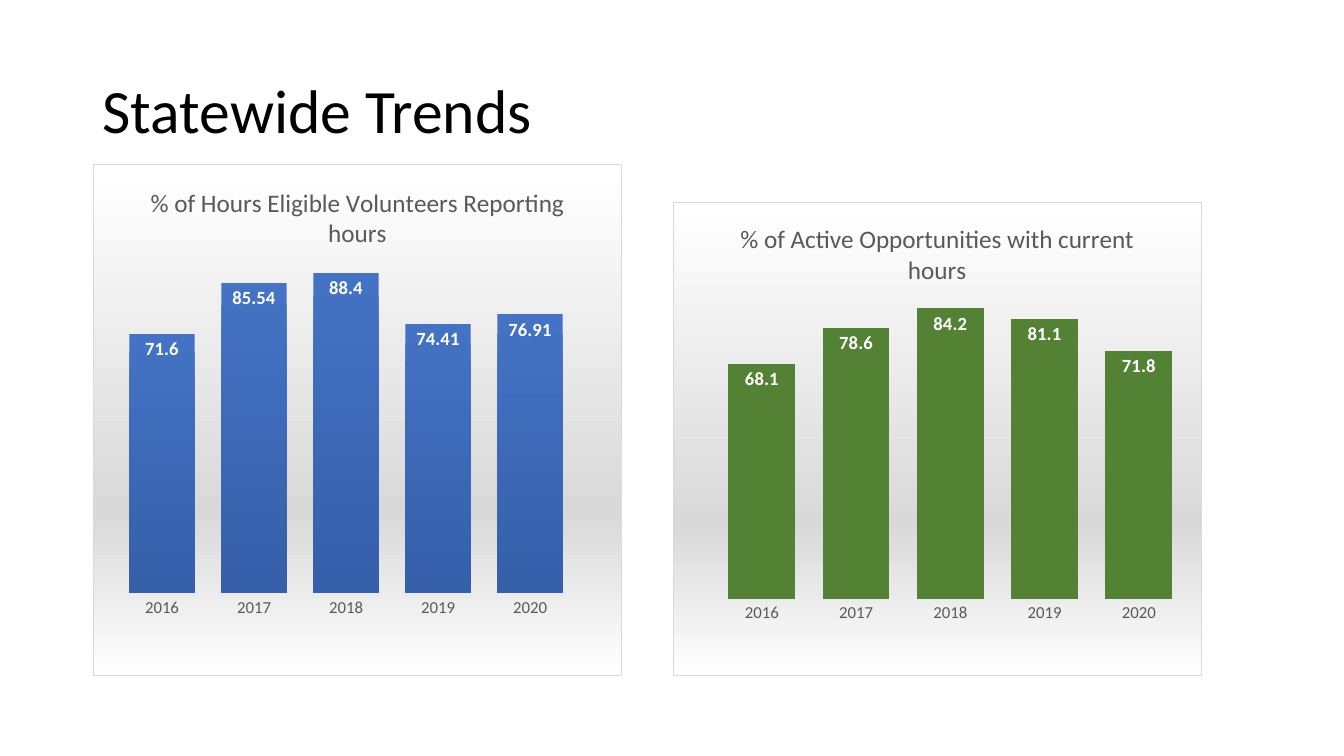
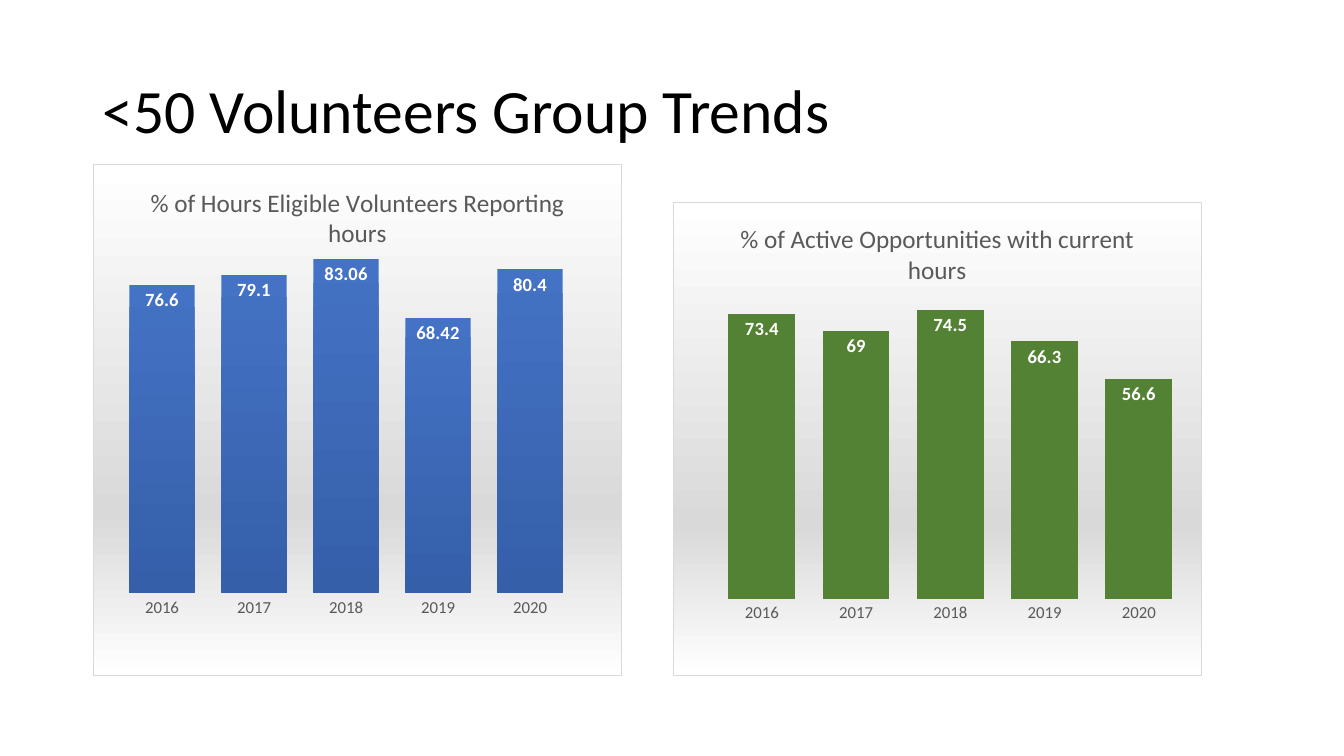
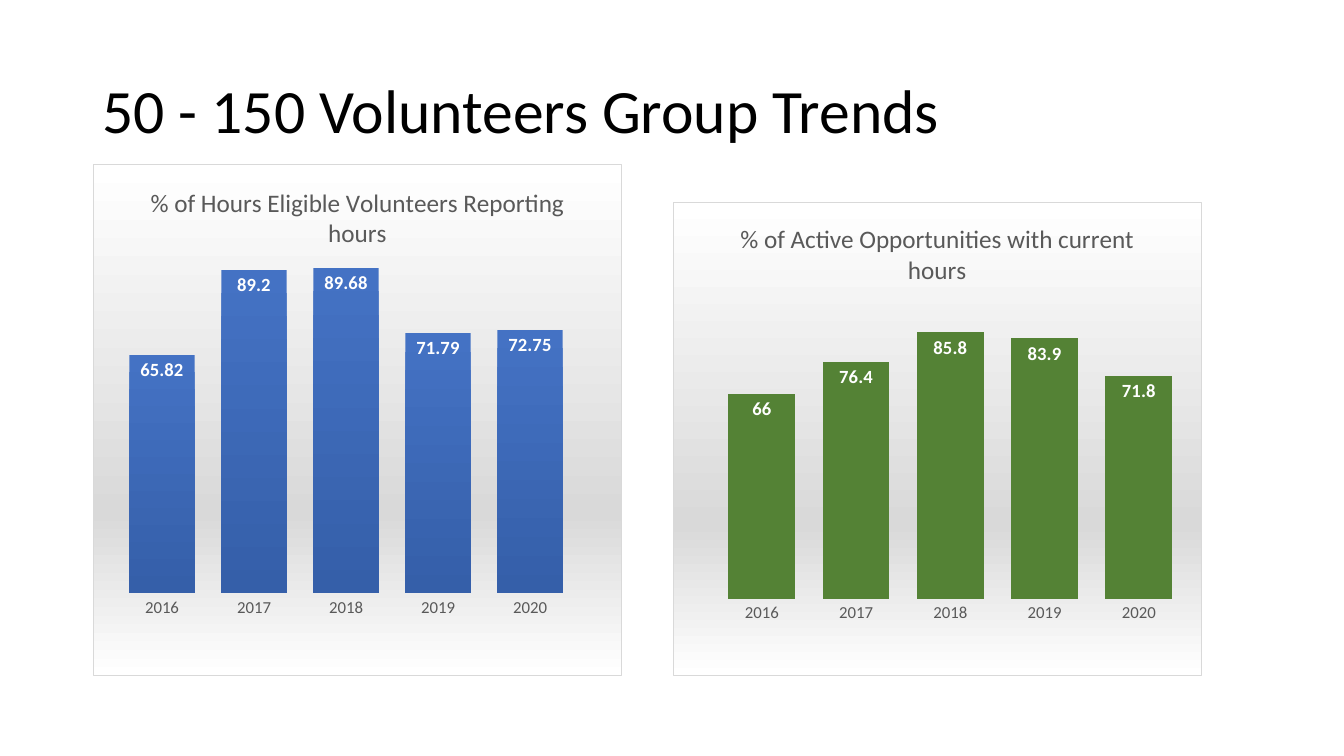
from dataclasses import dataclass

import lxml.etree
import pptx
import pptx.chart.chart
import pptx.chart.data
import pptx.dml.color
import pptx.enum.chart
import pptx.enum.text
import pptx.oxml
import pptx.oxml.ns
import pptx.presentation
import pptx.slide
import pptx.text.text
import pptx.util

RGBColor = pptx.dml.color.RGBColor
Inches = pptx.util.Inches
Pt = pptx.util.Pt

BLACK = RGBColor(0x00, 0x00, 0x00)
WHITE = RGBColor(0xFF, 0xFF, 0xFF)
GRAY_TEXT = RGBColor(0x59, 0x59, 0x59)
GRAY_LIGHT = RGBColor(0xD9, 0xD9, 0xD9)
BLUE = RGBColor(0x44, 0x72, 0xC4)
BLUE_DARK = RGBColor(0x35, 0x5F, 0xA9)
GREEN = RGBColor(0x54, 0x82, 0x35)

FONT = "Calibri"
YEARS = ("2016", "2017", "2018", "2019", "2020")

SLIDE_WIDTH, SLIDE_HEIGHT = 13.33, 7.5
MARGIN = 0.92
CONTENT_WIDTH = 11.5
TITLE_TOP, TITLE_HEIGHT = 0.4, 1.45
COLUMN_WIDTH, COLUMN_GAP = 5.25, 0.5
CHART_BOTTOM = 6.71

GradientStops = tuple[tuple[int, RGBColor], ...]
PANEL_STOPS: GradientStops = ((0, WHITE), (68, GRAY_LIGHT), (100, WHITE))


@dataclass(frozen=True)
class ChartStyle:
    title: str
    column: int
    top: float
    plot: tuple[float, float, float, float]
    bar_stops: GradientStops


@dataclass(frozen=True)
class Measure:
    values: tuple[float, ...]
    axis_maximum: int


@dataclass(frozen=True)
class TrendSlide:
    title: str
    reporting: Measure
    current: Measure


REPORTING_STYLE = ChartStyle(
    "% of Hours Eligible Volunteers Reporting hours",
    0, 1.63, (0.043, 0.129, 0.871, 0.71), ((0, BLUE), (100, BLUE_DARK)),
)
CURRENT_STYLE = ChartStyle(
    "% of Active Opportunities with current hours",
    1, 2.0, (0.079, 0.182, 0.892, 0.656), ((0, GREEN),),
)

TREND_SLIDES = (
    TrendSlide(
        "Statewide Trends",
        Measure((71.6, 85.54, 88.4, 74.41, 76.91), 100),
        Measure((68.1, 78.6, 84.2, 81.1, 71.8), 90),
    ),
    TrendSlide(
        "<50 Volunteers Group Trends",
        Measure((76.6, 79.1, 83.06, 68.42, 80.4), 90),
        Measure((73.4, 69, 74.5, 66.3, 56.6), 80),
    ),
    TrendSlide(
        "50 - 150 Volunteers Group Trends",
        Measure((65.82, 89.2, 89.68, 71.79, 72.75), 100),
        Measure((66, 76.4, 85.8, 83.9, 71.8), 100),
    ),
)


def format_font(font: pptx.text.text.Font, *, size: float, color: RGBColor, bold: bool = False) -> None:
    font.name = FONT
    font.size = Pt(size)
    font.bold = bold
    font.color.rgb = color


def write_text(
    text_frame: pptx.text.text.TextFrame,
    text: str,
    *,
    size: float,
    color: RGBColor,
    line_spacing: float = 1.0,
) -> None:
    paragraph = text_frame.paragraphs[0]
    paragraph.line_spacing = line_spacing
    run = paragraph.add_run()
    run.text = text
    format_font(run.font, size=size, color=color)


def gradient_fill(stops: GradientStops) -> lxml.etree.ElementBase:
    stop_xml = "".join(
        f'<a:gs pos="{position * 1000}"><a:srgbClr val="{color}"/></a:gs>' for position, color in stops
    )
    return pptx.oxml.parse_xml(
        f'<a:gradFill {pptx.oxml.ns.nsdecls("a")} rotWithShape="1"><a:gsLst>{stop_xml}</a:gsLst>'
        '<a:lin ang="5400000" scaled="0"/></a:gradFill>'
    )


def style_panel(chart: pptx.chart.chart.Chart) -> None:
    properties = pptx.oxml.parse_xml(
        f'<c:spPr {pptx.oxml.ns.nsdecls("c", "a")}><a:ln w="{Pt(0.75)}"><a:solidFill>'
        f'<a:srgbClr val="{GRAY_LIGHT}"/></a:solidFill></a:ln></c:spPr>'
    )
    properties.insert(0, gradient_fill(PANEL_STOPS))
    chart._chartSpace.find(pptx.oxml.ns.qn("c:chart")).addnext(properties)


def place_plot(chart: pptx.chart.chart.Chart, plot: tuple[float, float, float, float]) -> None:
    plot_area = chart._chartSpace.chart.plotArea
    for layout in plot_area.findall(pptx.oxml.ns.qn("c:layout")):
        plot_area.remove(layout)
    settings = [("layoutTarget", "inner"), ("xMode", "edge"), ("yMode", "edge"), *zip("xywh", plot)]
    setting_xml = "".join(f'<c:{name} val="{value}"/>' for name, value in settings)
    plot_area.insert(0, pptx.oxml.parse_xml(
        f'<c:layout {pptx.oxml.ns.nsdecls("c")}><c:manualLayout>{setting_xml}</c:manualLayout></c:layout>'
    ))


def style_axes(chart: pptx.chart.chart.Chart, maximum: int) -> None:
    category_axis = chart.category_axis
    category_axis.major_tick_mark = pptx.enum.chart.XL_TICK_MARK.NONE
    category_axis.format.line.fill.background()
    format_font(category_axis.tick_labels.font, size=12, color=GRAY_TEXT)
    value_axis = chart.value_axis
    value_axis.minimum_scale = 0
    value_axis.maximum_scale = maximum
    value_axis.has_major_gridlines = False
    value_axis.visible = False


def style_bars(chart: pptx.chart.chart.Chart, stops: GradientStops) -> None:
    plot = chart.plots[0]
    plot.gap_width = 41
    plot.vary_by_categories = False
    series = plot.series[0]
    series.invert_if_negative = False
    if len(stops) == 1:
        series.format.fill.solid()
        series.format.fill.fore_color.rgb = stops[0][1]
    else:
        series._element.get_or_add_spPr().insert(0, gradient_fill(stops))
    labels = series.data_labels
    labels.show_value = True
    labels.position = pptx.enum.chart.XL_LABEL_POSITION.INSIDE_END
    format_font(labels.font, size=13.3, color=WHITE, bold=True)


def add_trend_chart(slide: pptx.slide.Slide, style: ChartStyle, measure: Measure) -> None:
    chart_data = pptx.chart.data.CategoryChartData()
    chart_data.categories = YEARS
    chart_data.add_series("Series 1", measure.values)
    chart = slide.shapes.add_chart(
        pptx.enum.chart.XL_CHART_TYPE.COLUMN_CLUSTERED,
        Inches(MARGIN + style.column * (COLUMN_WIDTH + COLUMN_GAP)),
        Inches(style.top),
        Inches(COLUMN_WIDTH),
        Inches(CHART_BOTTOM - style.top),
        chart_data,
    ).chart
    format_font(chart.font, size=10, color=BLACK)
    chart.has_legend = False
    chart.has_title = True
    write_text(chart.chart_title.text_frame, style.title, size=18, color=GRAY_TEXT)
    chart.chart_title.include_in_layout = False
    style_panel(chart)
    place_plot(chart, style.plot)
    style_axes(chart, measure.axis_maximum)
    style_bars(chart, style.bar_stops)


def add_title(slide: pptx.slide.Slide, title: str) -> None:
    text_frame = slide.shapes.add_textbox(
        Inches(MARGIN), Inches(TITLE_TOP), Inches(CONTENT_WIDTH), Inches(TITLE_HEIGHT)
    ).text_frame
    text_frame.word_wrap = True
    text_frame.vertical_anchor = pptx.enum.text.MSO_ANCHOR.MIDDLE
    write_text(text_frame, title, size=44, color=BLACK, line_spacing=0.9)


def add_trend_slide(presentation: pptx.presentation.Presentation, content: TrendSlide) -> None:
    slide = presentation.slides.add_slide(presentation.slide_layouts[6])
    add_title(slide, content.title)
    add_trend_chart(slide, REPORTING_STYLE, content.reporting)
    add_trend_chart(slide, CURRENT_STYLE, content.current)


def main() -> None:
    presentation = pptx.Presentation()
    presentation.slide_width = Inches(SLIDE_WIDTH)
    presentation.slide_height = Inches(SLIDE_HEIGHT)
    for content in TREND_SLIDES:
        add_trend_slide(presentation, content)
    presentation.save("out.pptx")


if __name__ == "__main__":
    main()
